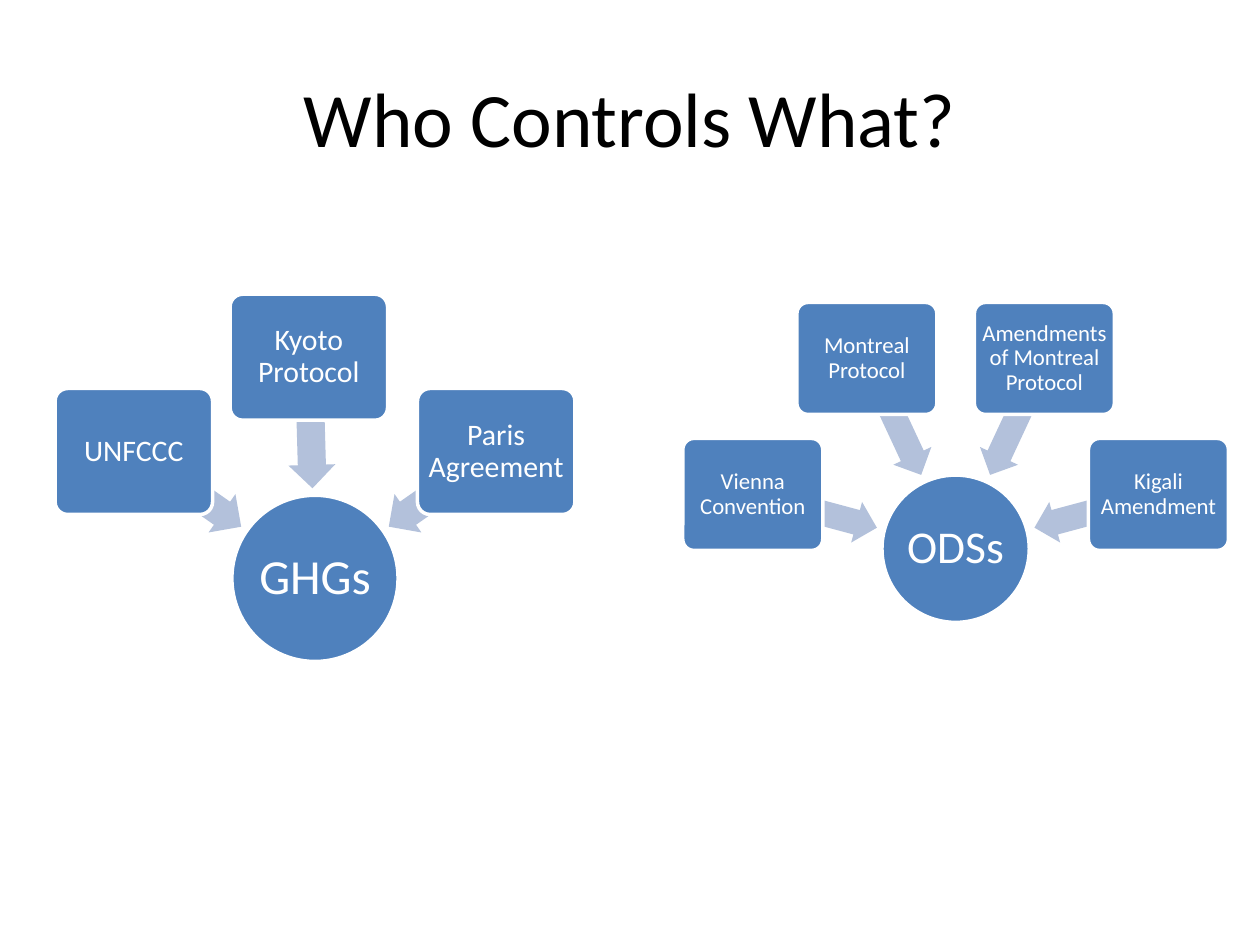
from math import cos, radians, sin

from pptx import Presentation
from pptx.dml.color import RGBColor
from pptx.enum.shapes import MSO_SHAPE as Shape
from pptx.enum.text import MSO_ANCHOR as Anchor, PP_ALIGN as Align
from pptx.util import Pt

BLUE = RGBColor(0x4F, 0x81, 0xBD)
PALE_BLUE = RGBColor(0xB3, 0xC1, 0xDB)
WHITE = RGBColor(0xFF, 0xFF, 0xFF)
BLACK = RGBColor(0x00, 0x00, 0x00)
FONT = "Calibri"

TITLE = "Who Controls What?"

# Sizes in points; each agreement sits at an angle in degrees on a ring round its hub.
CLUSTERS = [
    {
        "hub": "GHGs", "center": (180, 330.5), "diameter": 95, "hub_size": 28,
        "box": (90, 72), "box_ring": 126.4, "box_size": 17, "box_inset": 2.7,
        "arrow": (75, 26.8), "arrow_ring": 89,
        "agreements": [("UNFCCC", 215), ("Kyoto Protocol", 268.4),
                       ("Paris Agreement", 325)],
    },
    {
        "hub": "ODSs", "center": (546.1, 313.6), "diameter": 84.2, "hub_size": 26,
        "box": (80, 64), "box_ring": 120, "box_size": 13, "box_inset": 2,
        "arrow": (73.4, 24), "arrow_ring": 83.3,
        "agreements": [("Vienna Convention", 195), ("Montreal Protocol", 245),
                       ("Amendments of Montreal Protocol", 295),
                       ("Kigali Amendment", 345)],
    },
]


def write(shape, text, size, color=WHITE, inset=None, spacing=None):
    frame = shape.text_frame
    frame.word_wrap = True
    frame.vertical_anchor = Anchor.MIDDLE
    if inset is not None:
        frame.margin_left = frame.margin_right = Pt(inset)
        frame.margin_top = frame.margin_bottom = Pt(inset)
    para = frame.paragraphs[0]
    para.alignment = Align.CENTER
    para.line_spacing = spacing
    span = para.add_run()
    span.text = text
    span.font.name = FONT
    span.font.size = Pt(size)
    span.font.color.rgb = color


def add_centered(group, kind, center, size, fill, outlined=True):
    (x, y), (width, height) = center, size
    shape = group.shapes.add_shape(kind, Pt(x - width / 2), Pt(y - height / 2),
                                   Pt(width), Pt(height))
    shape.shadow.inherit = False
    shape.fill.solid()
    shape.fill.fore_color.rgb = fill
    if outlined:
        shape.line.color.rgb = WHITE
        shape.line.width = Pt(2)
    else:
        shape.line.fill.background()
    return shape


def on_ring(center, radius, angle):
    x, y = center
    return x + radius * cos(radians(angle)), y + radius * sin(radians(angle))


def add_cluster(page, cluster):
    group = page.shapes.add_group_shape()
    center, diameter = cluster["center"], cluster["diameter"]
    hub = add_centered(group, Shape.OVAL, center, (diameter, diameter), BLUE)
    write(hub, cluster["hub"], cluster["hub_size"], inset=1.4, spacing=0.9)

    for name, angle in cluster["agreements"]:
        arrow = add_centered(group, Shape.LEFT_ARROW,
                             on_ring(center, cluster["arrow_ring"], angle),
                             cluster["arrow"], PALE_BLUE, outlined=False)
        arrow.rotation = angle
        arrow.adjustments[0] = 0.6
        arrow.adjustments[1] = 0.5

        box = add_centered(group, Shape.ROUNDED_RECTANGLE,
                           on_ring(center, cluster["box_ring"], angle),
                           cluster["box"], BLUE)
        box.adjustments[0] = 0.1
        write(box, name, cluster["box_size"], inset=cluster["box_inset"], spacing=0.9)


def main():
    deck = Presentation()
    deck.slide_width, deck.slide_height = Pt(720), Pt(540)
    page = deck.slides.add_slide(deck.slide_layouts[5])

    title = page.shapes.title
    title.left, title.top = Pt(36), Pt(21.6)
    title.width, title.height = Pt(648), Pt(90)
    write(title, TITLE, 44, color=BLACK)

    for cluster in CLUSTERS:
        add_cluster(page, cluster)
    deck.save("out.pptx")


if __name__ == "__main__":
    main()
